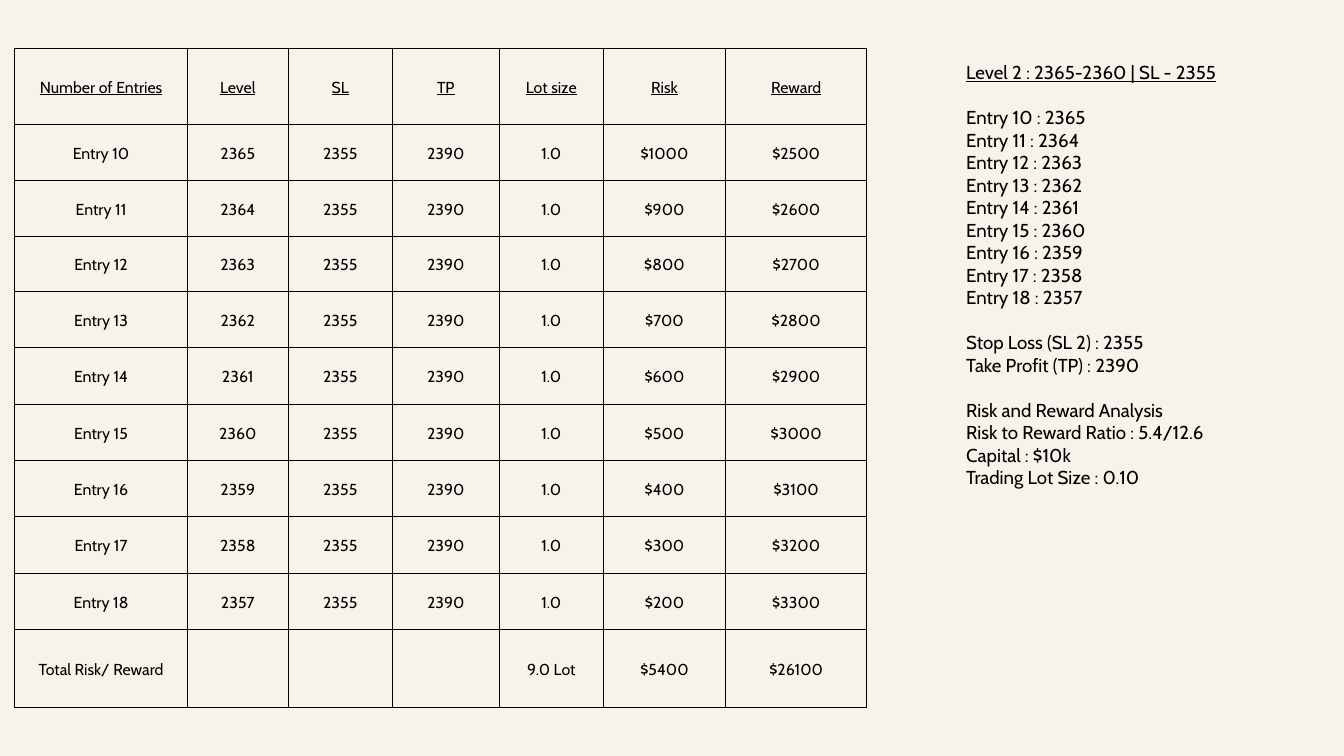
from lxml.etree import SubElement
from pptx import Presentation
from pptx.dml.color import RGBColor as RGB
from pptx.enum.text import MSO_ANCHOR as Anchor, MSO_AUTO_SIZE as AutoSize, PP_ALIGN as Align
from pptx.oxml.ns import qn
from pptx.util import Pt

COLORS = {"background": "F6F3EB", "ink": "000000"}
FONT = "Cabin"

STOP_LOSS, TAKE_PROFIT = 2355, 2390
LOT, DOLLARS_PER_POINT = 1.0, 100
ENTRIES = [(number, 2375 - number) for number in range(10, 19)]

COLUMN_WIDTHS = [185, 108, 111.6, 114.5, 111.6, 131, 151.2]
ROW_HEIGHTS = [80.9, 60.2, 60.2, 58.8, 60.2, 61, 60.2, 60.4, 60.4, 60.4, 83.5]


def write(p, text, size=20, leading=24.1, before=0, align=Align.LEFT, underline=False):
    p.alignment = align
    p.line_spacing = Pt(leading)
    p.space_before = Pt(before)
    r = p.add_run()
    r.text = text
    r.font.name = FONT
    r.font.size = Pt(size)
    r.font.underline = underline
    r.font.color.rgb = RGB.from_string(COLORS["ink"])


def add_borders(cell, width=0.75):
    tc_pr = cell._tc.get_or_add_tcPr()
    for side in ("lnL", "lnR", "lnT", "lnB"):
        line = SubElement(tc_pr, qn(f"a:{side}"), w=str(Pt(width)))
        fill = SubElement(line, qn("a:solidFill"))
        SubElement(fill, qn("a:srgbClr"), val=COLORS["ink"])


class TradeSlide:
    def __init__(self, prs):
        self.s = prs.slides.add_slide(prs.slide_layouts[6])
        fill = self.s.background.fill
        fill.solid()
        fill.fore_color.rgb = RGB.from_string(COLORS["background"])

    def text_box(self, left, top, width, height, groups):
        """Stack groups of lines, one line apart; the first line is underlined."""
        tf = self.s.shapes.add_textbox(Pt(left), Pt(top), Pt(width), Pt(height)).text_frame
        tf.word_wrap = True
        tf.auto_size = AutoSize.SHAPE_TO_FIT_TEXT
        tf.margin_left = tf.margin_right = tf.margin_top = tf.margin_bottom = 0
        for g, lines in enumerate(groups):
            for i, line in enumerate(lines):
                first = g == i == 0
                p = tf.paragraphs[0] if first else tf.add_paragraph()
                write(p, line, before=24.1 if g and i == 0 else 0, underline=first)

    def table(self, left, top, widths, heights, rows):
        frame = self.s.shapes.add_table(len(heights), len(widths), Pt(left), Pt(top),
                                        Pt(sum(widths)), Pt(sum(heights)))
        table = frame.table
        table.first_row = table.horz_banding = False
        for column, width in zip(table.columns, widths):
            column.width = Pt(width)
        for i, (row, height, values) in enumerate(zip(table.rows, heights, rows)):
            row.height = Pt(height)
            for cell, value in zip(row.cells, values):
                self.cell(cell, value, underline=i == 0)

    def cell(self, cell, text, underline):
        add_borders(cell)
        cell.fill.background()
        cell.vertical_anchor = Anchor.MIDDLE
        cell.margin_left = cell.margin_right = cell.margin_top = cell.margin_bottom = Pt(15)
        if text:
            write(cell.text_frame.paragraphs[0], text, size=17, leading=23.8,
                  align=Align.CENTER, underline=underline)


def trade_rows():
    rows = [["Number of Entries", "Level", "SL", "TP", "Lot size", "Risk", "Reward"]]
    total_risk = total_reward = 0
    for number, level in ENTRIES:
        risk = (level - STOP_LOSS) * DOLLARS_PER_POINT
        reward = (TAKE_PROFIT - level) * DOLLARS_PER_POINT
        total_risk += risk
        total_reward += reward
        rows.append([f"Entry {number}", str(level), str(STOP_LOSS), str(TAKE_PROFIT),
                     str(LOT), f"${risk}", f"${reward}"])
    rows.append(["Total Risk/ Reward", "", "", "", f"{LOT * len(ENTRIES)} Lot",
                 f"${total_risk}", f"${total_reward}"])
    return rows


def main():
    prs = Presentation()
    prs.slide_width, prs.slide_height = Pt(1440), Pt(810)
    slide = TradeSlide(prs)
    slide.text_box(1035.2, 65.5, 365.8, 456.5, [
        [f"Level 2 : 2365-2360 | SL - {STOP_LOSS}"],
        [f"Entry {number} : {level}" for number, level in ENTRIES],
        [f"Stop Loss (SL 2) : {STOP_LOSS}", f"Take Profit (TP) : {TAKE_PROFIT}"],
        ["Risk and Reward Analysis", "Risk to Reward Ratio : 5.4/12.6",
         "Capital : $10k", "Trading Lot Size : 0.10"],
    ])
    slide.table(15.8, 51.8, COLUMN_WIDTHS, ROW_HEIGHTS, trade_rows())
    prs.save("out.pptx")


if __name__ == "__main__":
    main()
